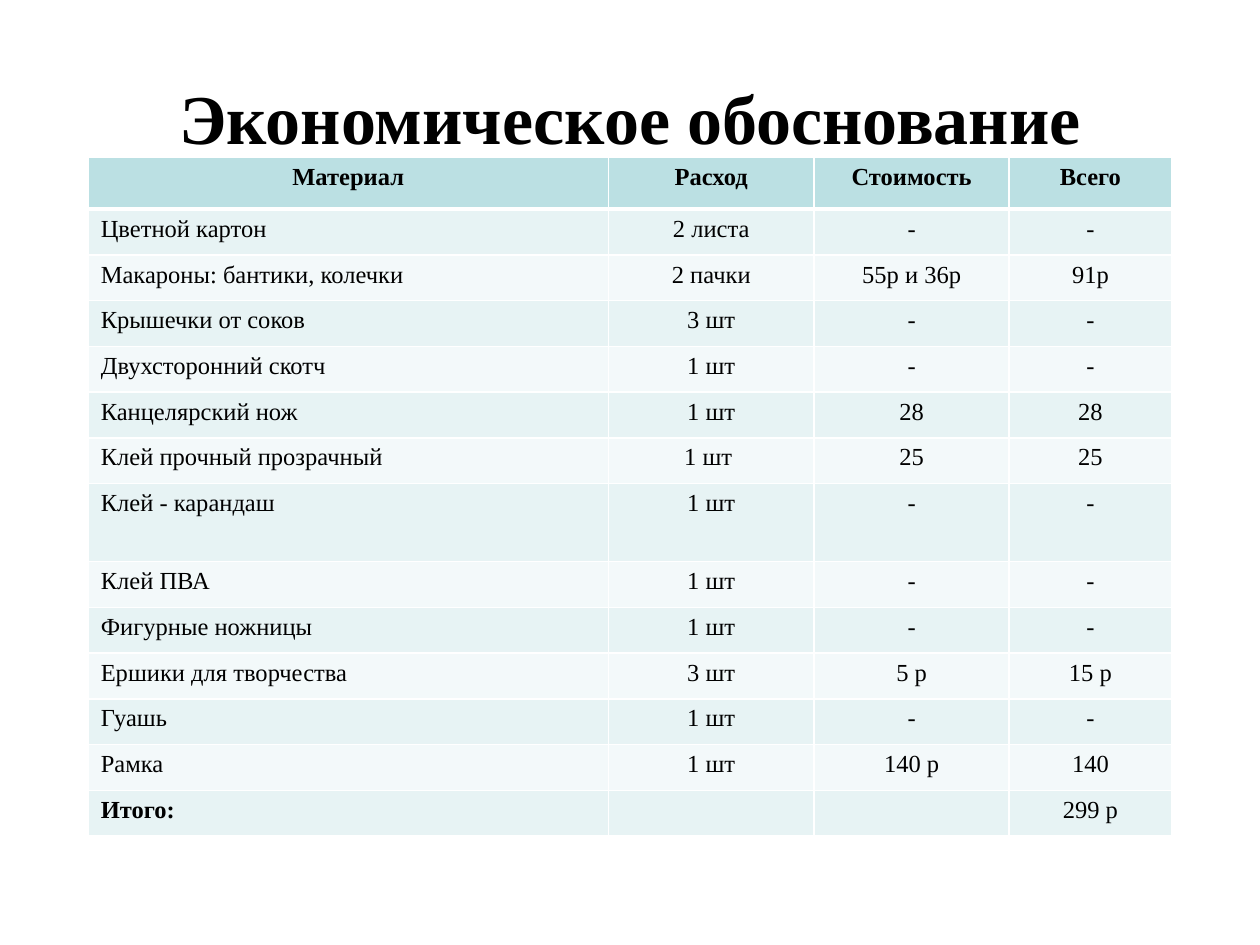
from typing import NamedTuple

from lxml import etree
from pptx import Presentation
from pptx import util as u
from pptx.dml.color import RGBColor
from pptx.enum import text
from pptx.oxml import ns

SLIDE_WIDTH, SLIDE_HEIGHT = u.Inches(10), u.Inches(7.5)
FONT = "Times New Roman"
BLACK = RGBColor(0x00, 0x00, 0x00)
WHITE = RGBColor(0xFF, 0xFF, 0xFF)
HEADER = RGBColor(0xBB, 0xE0, 0xE3)
BANDS = (RGBColor(0xF3, 0xF9, 0xFA), RGBColor(0xE7, 0xF3, 0xF4))

COLUMN_SHARES = (0.48, 0.19, 0.18, 0.15)
TABLE_HEIGHT, HEADER_HEIGHT, TALL_HEIGHT = 5.39, 0.41, 0.62
TALL_ROW = 7
THIN, THICK = u.Pt(1), u.Pt(3)


class Material(NamedTuple):
    name: str
    amount: str
    price: str = "-"
    total: str = "-"


HEADINGS = Material("Материал", "Расход", "Стоимость", "Всего")
MATERIALS = (
    Material("Цветной картон", "2 листа"),
    Material("Макароны: бантики, колечки", "2 пачки", "55р и 36р", "91р"),
    Material("Крышечки от соков", "3 шт"),
    Material("Двухсторонний скотч", "1 шт"),
    Material("Канцелярский нож", "1 шт", "28", "28"),
    Material("Клей прочный прозрачный", "1 шт ", "25", "25"),
    Material("Клей - карандаш", "1 шт"),
    Material("Клей ПВА", "1 шт"),
    Material("Фигурные ножницы", "1 шт"),
    Material("Ершики для творчества", "3 шт", "5 р", "15 р"),
    Material("Гуашь", "1 шт"),
    Material("Рамка", "1 шт", "140 р", "140"),
)
SUMMARY = Material("Итого:", "", "", "299 р")


def add_run(paragraph, words: str, size: int, bold: bool) -> None:
    run = paragraph.add_run()
    run.text = words
    run.font.name = FONT
    run.font.size = u.Pt(size)
    run.font.bold = bold
    run.font.color.rgb = BLACK


def add_borders(cell, top: int, bottom: int) -> None:
    properties = cell._tc.get_or_add_tcPr()
    for side, width in (("L", THIN), ("R", THIN), ("T", top), ("B", bottom)):
        line = etree.SubElement(properties, ns.qn(f"a:ln{side}"), w=str(width))
        fill = etree.SubElement(line, ns.qn("a:solidFill"))
        etree.SubElement(fill, ns.qn("a:srgbClr"), val=str(WHITE))


def fill_cell(cell, words: str, row: int, column: int) -> None:
    add_borders(cell, THICK if row == 1 else THIN, THICK if row == 0 else THIN)
    cell.fill.solid()
    cell.fill.fore_color.rgb = HEADER if row == 0 else BANDS[row % 2]
    paragraph = cell.text_frame.paragraphs[0]
    centred = row == 0 or column > 0
    paragraph.alignment = text.PP_ALIGN.CENTER if centred else text.PP_ALIGN.LEFT
    if words:
        add_run(paragraph, words, 14, row == 0 or words == SUMMARY.name)
    else:
        etree.SubElement(paragraph._p, ns.qn("a:endParaRPr"), sz="1400")


def add_title(slide, words: str) -> None:
    title = slide.shapes.title
    title.left, title.top = int(SLIDE_WIDTH * 0.05), int(SLIDE_HEIGHT * 0.04)
    title.width, title.height = int(SLIDE_WIDTH * 0.9), u.Inches(1.25)
    frame = title.text_frame
    frame.word_wrap = True
    frame.vertical_anchor = text.MSO_ANCHOR.MIDDLE
    paragraph = frame.paragraphs[0]
    paragraph.alignment = text.PP_ALIGN.CENTER
    add_run(paragraph, words, 40, True)


def add_cost_table(slide, rows: tuple[Material, ...]) -> None:
    width = int(SLIDE_WIDTH * 0.86)
    table = slide.shapes.add_table(
        len(rows), len(COLUMN_SHARES), int(SLIDE_WIDTH * 0.07), u.Inches(1.25),
        width, u.Inches(TABLE_HEIGHT),
    ).table
    for column, share in zip(table.columns, COLUMN_SHARES):
        column.width = int(width * share)
    row_height = (TABLE_HEIGHT - HEADER_HEIGHT - TALL_HEIGHT) / (len(rows) - 2)
    special_heights = {0: HEADER_HEIGHT, TALL_ROW: TALL_HEIGHT}
    for row, material in enumerate(rows):
        table.rows[row].height = u.Inches(special_heights.get(row, row_height))
        for column, words in enumerate(material):
            fill_cell(table.cell(row, column), words, row, column)


def main() -> None:
    presentation = Presentation()
    presentation.slide_width, presentation.slide_height = SLIDE_WIDTH, SLIDE_HEIGHT
    slide = presentation.slides.add_slide(presentation.slide_layouts[5])
    add_title(slide, "Экономическое обоснование")
    add_cost_table(slide, (HEADINGS, *MATERIALS, SUMMARY))
    presentation.save("out.pptx")


if __name__ == "__main__":
    main()
